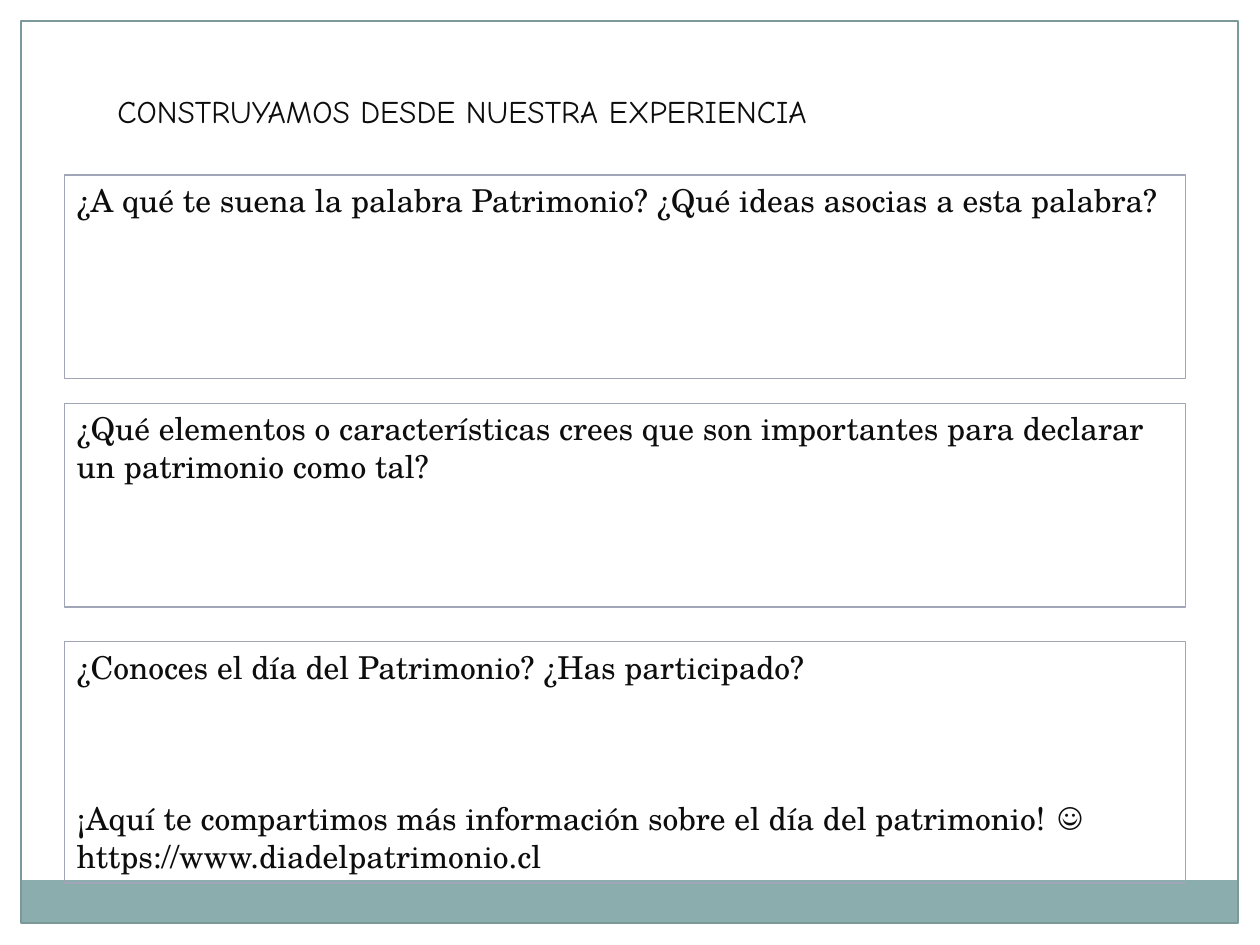
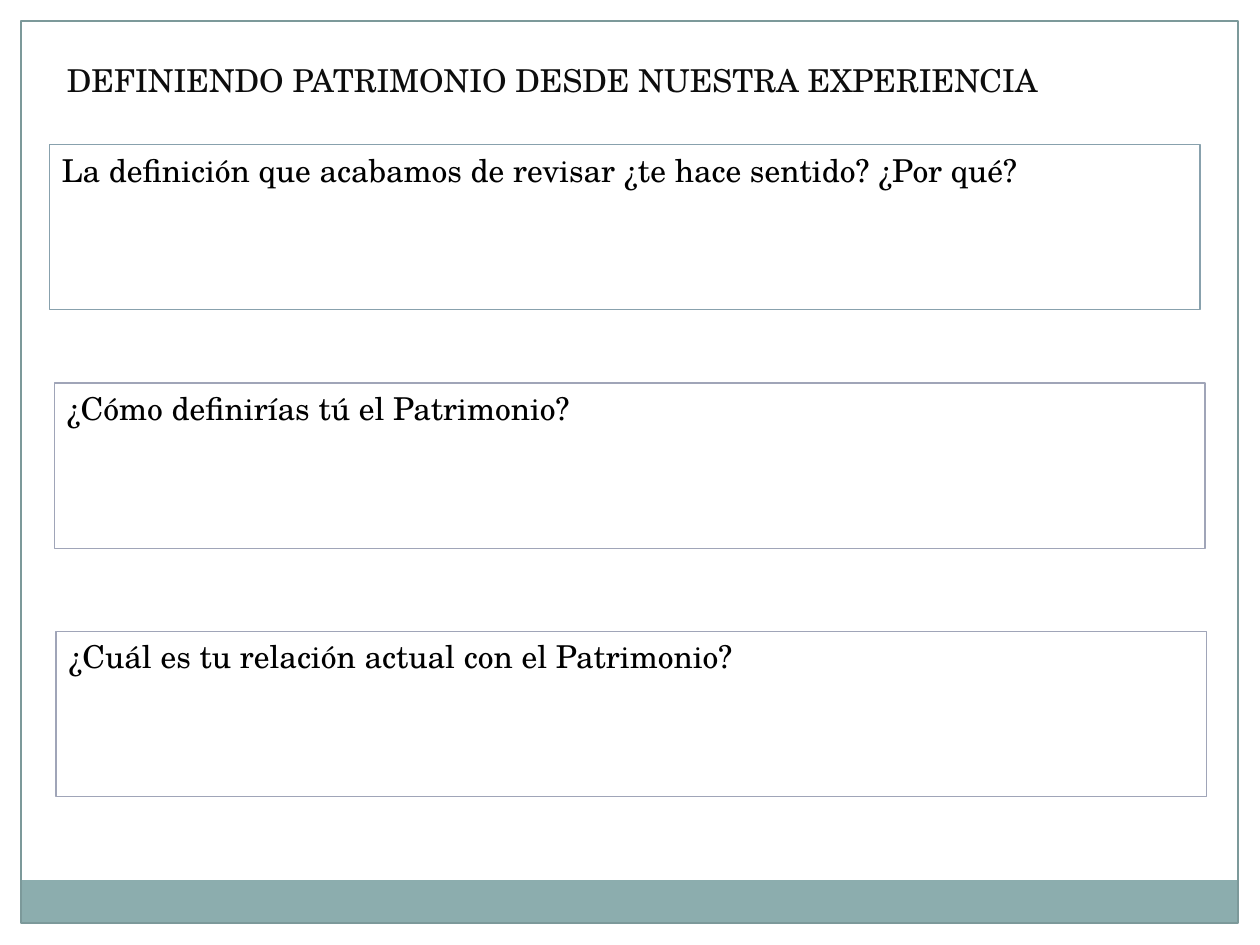
from pptx import Presentation
from pptx.dml.color import RGBColor
from pptx.enum.shapes import MSO_SHAPE
from pptx.enum.text import MSO_ANCHOR, MSO_AUTO_SIZE, PP_ALIGN
from pptx.util import Pt

RECTANGLE = MSO_SHAPE.RECTANGLE
TOP = MSO_ANCHOR.TOP
LEFT = PP_ALIGN.LEFT
NO_AUTOFIT = MSO_AUTO_SIZE.NONE

COLORS = {
    "band": "8CADAE",
    "frame": "7C999A",
    "lilac": "A0A5B8",
    "blue": "88A1AD",
    "ink": "0D0D0D",
    "black": "000000",
}
SERIF = "TeX Gyre Schola"
HAND = "Comic Neue"
TITLE_ONLY = 5
TEXT_SIZE = 18
ANSWER_GAP = 65  # room for a written answer between two paragraphs

FRAME_BOX = (12, 12, 695.5, 515.5)
BAND_HEIGHT = 24.5


def color(name):
    return RGBColor.from_string(COLORS[name])


def add_rectangle(page, box, fill=None, line=None):
    shape = page.shapes.add_shape(RECTANGLE, *map(Pt, box))
    shape.shadow.inherit = False
    if fill:
        shape.fill.solid()
        shape.fill.fore_color.rgb = color(fill)
    else:
        shape.fill.background()
    if line:
        shape.line.color.rgb = color(line)
        shape.line.width = Pt(0.75)
    else:
        shape.line.fill.background()
    return shape


def write(shape, paragraphs, ink, font=SERIF):
    frame = shape.text_frame
    frame.text = "\n".join(paragraphs)
    frame.word_wrap = True
    frame.auto_size = NO_AUTOFIT
    frame.vertical_anchor = TOP
    for para in frame.paragraphs:
        para.alignment = LEFT
        for span in para.runs:
            span.font.name = font
            span.font.size = Pt(TEXT_SIZE)
            span.font.color.rgb = color(ink)


def add_frame(page, box):
    """Draw the page border with the coloured band along its foot."""
    left, top, width, height = box
    band_top = top + height - BAND_HEIGHT
    add_rectangle(page, (left, band_top, width, BAND_HEIGHT), fill="band")
    add_rectangle(page, box, line="frame")


def place_title(page, box, text, font):
    title = page.shapes.title
    title.left, title.top, title.width, title.height = map(Pt, box)
    write(title, [text], "ink", font)


def add_question(page, box, paragraphs, ink, line="lilac"):
    """Add an outlined answer box; the second paragraph starts below the answer."""
    question = add_rectangle(page, box, line=line)
    write(question, paragraphs, ink)
    if len(paragraphs) > 1:
        question.text_frame.paragraphs[1].space_before = Pt(ANSWER_GAP)


def add_page(deck, title_box, title, font):
    page = deck.slides.add_slide(deck.slide_layouts[TITLE_ONLY])
    add_frame(page, FRAME_BOX)
    place_title(page, title_box, title, font)
    return page


def build_experience_page(deck):
    page = add_page(deck, (59.8, 49, 589.7, 51),
                    "CONSTRUYAMOS DESDE NUESTRA EXPERIENCIA", HAND)
    questions = [
        (100, 116.5, ["¿A qué te suena la palabra Patrimonio? "
                      "¿Qué ideas asocias a esta palabra?"]),
        (230.4, 116.5, ["¿Qué elementos o características crees que son "
                        "importantes para declarar un patrimonio como tal?"]),
        (366.5, 138.2, ["¿Conoces el día del Patrimonio? ¿Has participado?",
                        "¡Aquí te compartimos más información sobre el día "
                        "del patrimonio! ☺",
                        "https://www.diadelpatrimonio.cl"]),
    ]
    for top, height, paragraphs in questions:
        add_question(page, (36.7, top, 640.8, height), paragraphs, "ink")


def build_definition_page(deck):
    page = add_page(deck, (31, 31.5, 652.3, 51),
                    "DEFINIENDO PATRIMONIO DESDE NUESTRA EXPERIENCIA", SERIF)
    questions = [
        (28.1, 82.6, "blue", "La definición que acabamos de revisar "
                             "¿te hace sentido? ¿Por qué?"),
        (31, 218.9, "lilac", "¿Cómo definirías tú el Patrimonio?"),
        (32, 360.7, "lilac", "¿Cuál es tu relación actual con el Patrimonio?"),
    ]
    for left, top, line, text in questions:
        add_question(page, (left, top, 657.6, 94.5), [text], "black", line)


def main():
    deck = Presentation()
    deck.slide_width, deck.slide_height = Pt(720), Pt(540)
    build_experience_page(deck)
    build_definition_page(deck)
    deck.save("out.pptx")


if __name__ == "__main__":
    main()
